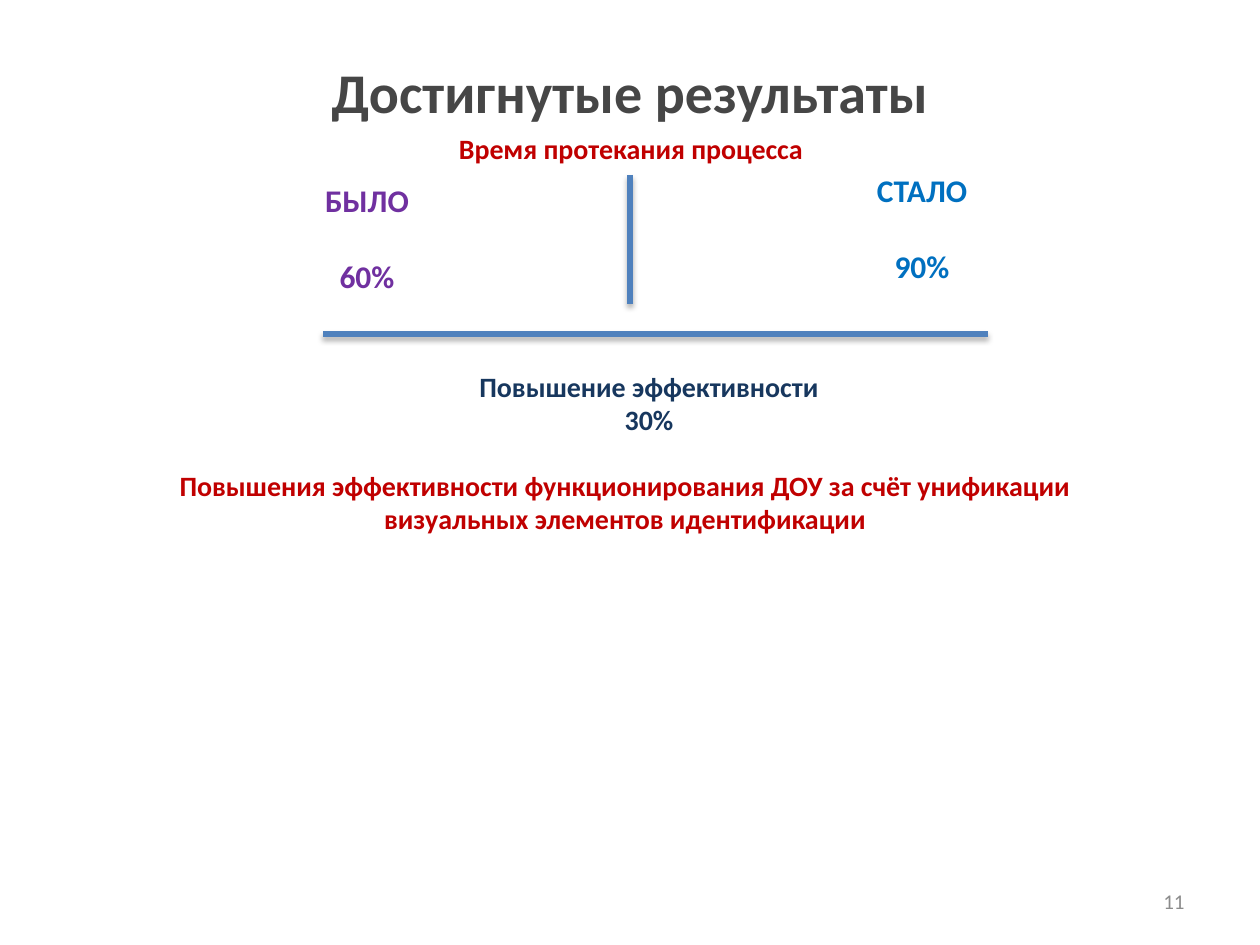
from lxml import etree
from pptx import Presentation
from pptx.dml.color import RGBColor
from pptx.enum.shapes import MSO_CONNECTOR
from pptx.enum.text import MSO_ANCHOR, PP_ALIGN
from pptx.oxml.ns import qn
from pptx.util import Emu, Pt

STRAIGHT = MSO_CONNECTOR.STRAIGHT
TOP, MIDDLE = MSO_ANCHOR.TOP, MSO_ANCHOR.MIDDLE
CENTER, RIGHT = PP_ALIGN.CENTER, PP_ALIGN.RIGHT

FONT = "Calibri"
DARK_GRAY = RGBColor(0x46, 0x46, 0x46)
GRAY = RGBColor(0x8C, 0x8C, 0x8C)
RED = RGBColor(0xC0, 0x00, 0x00)
PURPLE = RGBColor(0x70, 0x30, 0xA0)
BLUE = RGBColor(0x00, 0x70, 0xC0)
NAVY = RGBColor(0x17, 0x37, 0x5E)
LINE_BLUE = RGBColor(0x4F, 0x81, 0xBD)


def px(n):
    return Emu(round(n * 914400 / 126))


def write(tf, lines, size, color, bold=True, align=CENTER, anchor=TOP, gap=0):
    tf.word_wrap = True
    tf.vertical_anchor = anchor
    for i, line in enumerate(lines):
        p = tf.add_paragraph() if i else tf.paragraphs[0]
        p.alignment = align
        if i:
            p.space_before = Pt(gap)
        r = p.add_run()
        r.text = line
        r.font.name = FONT
        r.font.size = Pt(size)
        r.font.bold = bold
        r.font.color.rgb = color


def add_title(s, box, text):
    title = s.shapes.title
    title.left, title.top, title.width, title.height = map(px, box)
    write(title.text_frame, [text], 32, DARK_GRAY, anchor=MIDDLE)


def add_text(s, box, lines, size, color, **style):
    sp = s.shapes.add_textbox(*map(px, box))
    write(sp.text_frame, lines, size, color, **style)


def add_line(s, *ends):
    line = s.shapes.add_connector(STRAIGHT, *map(px, ends))
    line.line.color.rgb = LINE_BLUE
    line.line.width = Pt(3)
    effects = etree.SubElement(line._element.spPr, qn("a:effectLst"))
    shadow = etree.SubElement(effects, qn("a:outerShdw"), blurRad=str(Pt(3.1)),
                              dist=str(Pt(1.8)), dir="5400000", rotWithShape="0")
    color = etree.SubElement(shadow, qn("a:srgbClr"), val="000000")
    etree.SubElement(color, qn("a:alpha"), val="35000")


def main():
    prs = Presentation()
    prs.slide_width, prs.slide_height = px(1260), px(945)
    s = prs.slides.add_slide(prs.slide_layouts[5])

    add_title(s, (63, 38, 1134, 107), "Достигнутые результаты")
    add_text(s, (64, 125, 1134, 624), ["Время протекания процесса"], 16, RED)
    add_text(s, (903, 876, 294, 50), ["11"], 12, GRAY,
             bold=False, align=RIGHT, anchor=MIDDLE)

    add_line(s, 630, 175, 630, 304)
    add_text(s, (193, 175, 348, 280), ["БЫЛО", "60%"], 18, PURPLE, gap=22)
    add_text(s, (748, 165, 348, 127), ["СТАЛО", "90%"], 18, BLUE, gap=22)
    add_line(s, 988, 334, 323, 334)

    add_text(s, (451, 363, 396, 158), ["Повышение эффективности", "30%"], 16, NAVY)
    add_text(s, (113, 462, 1024, 81),
             ["Повышения эффективности функционирования ДОУ за счёт унификации "
              "визуальных элементов идентификации"], 16, RED)
    prs.save("out.pptx")


if __name__ == "__main__":
    main()
